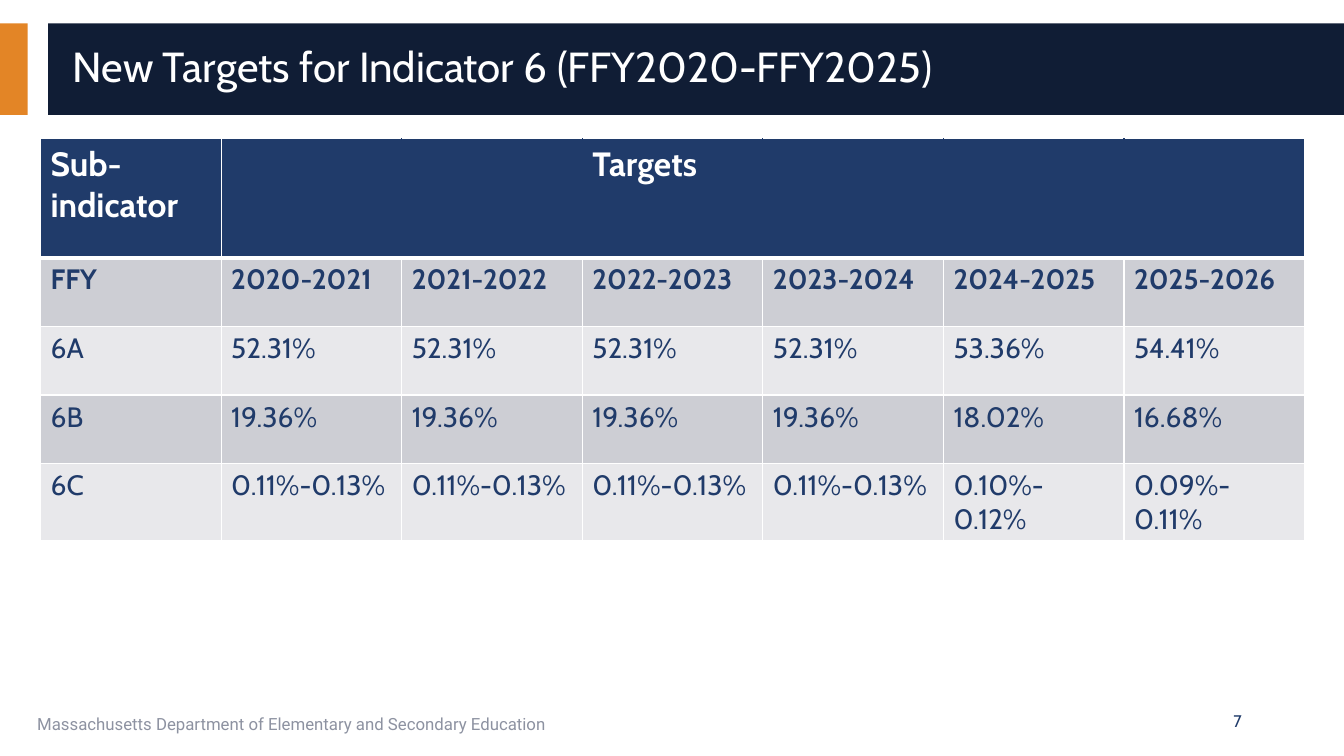
import pptx
import pptx.dml.color
import pptx.enum.shapes
import pptx.enum.text
import pptx.oxml.ns
import pptx.util
from lxml import etree

Pt = pptx.util.Pt
RGBColor = pptx.dml.color.RGBColor

ORANGE = RGBColor(0xE3, 0x85, 0x26)
MIDNIGHT = RGBColor(0x10, 0x1D, 0x35)
NAVY = RGBColor(0x20, 0x3B, 0x6A)
WHITE = RGBColor(0xFF, 0xFF, 0xFF)
FOOTER_GRAY = RGBColor(0x8D, 0x92, 0xA1)
DARK_BAND = RGBColor(0xCD, 0xCE, 0xD4)
LIGHT_BAND = RGBColor(0xE8, 0xE8, 0xEB)


def write_text(paragraph, text, size, color, font="Cabin", bold=False):
    run = paragraph.add_run()
    run.text = text
    run.font.size = Pt(size)
    run.font.name = font
    run.font.bold = bold
    run.font.color.rgb = color


def add_border(cell, side, color, width):
    """Draw one cell edge; side is L, R, T or B, called in that order."""
    properties = cell._tc.get_or_add_tcPr()
    line = etree.SubElement(properties, pptx.oxml.ns.qn(f"a:ln{side}"), w=str(Pt(width)))
    fill = etree.SubElement(line, pptx.oxml.ns.qn("a:solidFill"))
    etree.SubElement(fill, pptx.oxml.ns.qn("a:srgbClr"), val=str(color))


presentation = pptx.Presentation()
presentation.slide_width = Pt(960)
presentation.slide_height = Pt(540)
slide = presentation.slides.add_slide(presentation.slide_layouts[6])

# Title band
for left, width, color in [(0, 19.8, ORANGE), (34.4, 925.6, MIDNIGHT)]:
    band = slide.shapes.add_shape(
        pptx.enum.shapes.MSO_SHAPE.RECTANGLE, Pt(left), Pt(16.6), Pt(width), Pt(65.5))
    band.shadow.inherit = False
    band.fill.solid()
    band.fill.fore_color.rgb = color
    band.line.fill.background()

# Text boxes
frames = []
for left, top, width, height in [
    (19.5, 500.4, 608, 29),
    (44.8, 22.6, 896, 53.3),
    (678.2, 500.4, 216, 28.8),
]:
    frame = slide.shapes.add_textbox(Pt(left), Pt(top), Pt(width), Pt(height)).text_frame
    frame.word_wrap = True
    frame.vertical_anchor = pptx.enum.text.MSO_ANCHOR.MIDDLE
    frames.append(frame)
footer, title, page_number = frames

footer.vertical_anchor = pptx.enum.text.MSO_ANCHOR.TOP
footer.margin_top = Pt(9.2)
write_text(footer.paragraphs[0], "Massachusetts Department of Elementary and Secondary Education",
           12, FOOTER_GRAY, font="Roboto")
title.paragraphs[0].line_spacing = 0.9
write_text(title.paragraphs[0], "New Targets for Indicator 6 (FFY2020-FFY2025)", 30, WHITE)
page_number.paragraphs[0].alignment = pptx.enum.text.PP_ALIGN.RIGHT
write_text(page_number.paragraphs[0], "7", 12, NAVY)

# Targets table
rows = [
    ["Sub-indicator", "", "", "Targets", "", "", ""],
    ["FFY"] + [f"{year}-{year + 1}" for year in range(2020, 2026)],
    ["6A"] + ["52.31%"] * 4 + ["53.36%", "54.41%"],
    ["6B"] + ["19.36%"] * 4 + ["18.02%", "16.68%"],
    ["6C"] + ["0.11%-0.13%"] * 4 + ["0.10%-0.12%", "0.09%-0.11%"],
]
last_column = len(rows[0]) - 1
table = slide.shapes.add_table(
    len(rows), len(rows[0]), Pt(29), Pt(99.2), Pt(903), Pt(281)).table
for column in table.columns:
    column.width = Pt(129)

for row_index, values in enumerate(rows):
    is_header = row_index == 0
    table.rows[row_index].height = Pt(85 if is_header else 49)
    if is_header:
        fill_color = NAVY
    else:
        fill_color = DARK_BAND if row_index % 2 else LIGHT_BAND
    for column_index, value in enumerate(values):
        cell = table.cell(row_index, column_index)
        # Header cells under "Targets" read as one block
        left_color = NAVY if is_header and column_index > 1 else WHITE
        right_color = NAVY if is_header and 0 < column_index < last_column else WHITE
        add_border(cell, "L", left_color, 1)
        add_border(cell, "R", right_color, 1)
        add_border(cell, "T", WHITE, 1)
        add_border(cell, "B", WHITE, 3 if is_header else 1)
        cell.fill.solid()
        cell.fill.fore_color.rgb = fill_color
        if value:
            write_text(cell.text_frame.paragraphs[0], value, 24 if is_header else 20,
                       WHITE if is_header else NAVY, bold=row_index < 2)

presentation.save("out.pptx")
